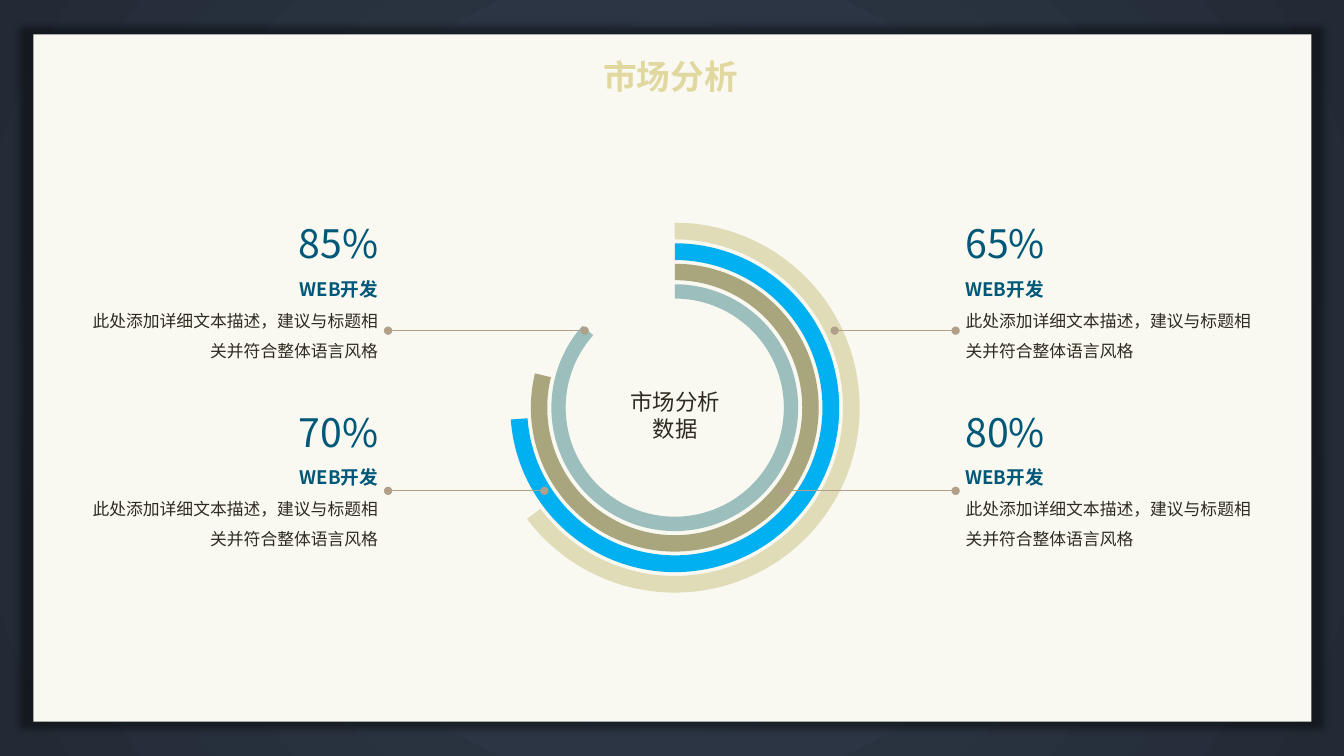
from dataclasses import dataclass
from typing import Any

from lxml.etree import SubElement
from pptx import Presentation
from pptx.dml.color import RGBColor
from pptx.enum.shapes import MSO_CONNECTOR, MSO_SHAPE
from pptx.enum.text import MSO_ANCHOR, MSO_AUTO_SIZE, PP_ALIGN
from pptx.oxml.ns import qn
from pptx.util import Pt


@dataclass(frozen=True)
class Theme:
    font: str = "Noto Sans CJK SC"
    night: str = "222A35"
    dusk: str = "333F50"
    paper: str = "F9F8F1"
    bronze: str = "84703F"
    gold: str = "E1D8A0"
    navy: str = "005878"
    ink: str = "2F2B20"
    rule: str = "B1A089"
    title: float = 24
    core: float = 16
    share: float = 28
    head: float = 13.3
    body: float = 12


@dataclass(frozen=True)
class Ring:
    color: str
    end: float  # degrees, clockwise from three o'clock
    band: float  # thickness as a share of the diameter


@dataclass(frozen=True)
class Note:
    share: str
    left: float
    top: float
    align: PP_ALIGN


@dataclass(frozen=True)
class Lead:
    start: float
    stop: float
    y: float


@dataclass(frozen=True)
class Line:
    text: str
    size: float
    color: str
    bold: bool = False
    space: dict[str, Any] | None = None


T = Theme()
MID_X, MID_Y = 482, 291.2
OUTER, STEP = 264.2, 29.3
LEFT, RIGHT = 51.1, 682.6
WIDE, HIGH = 226.1, 108.7
ROWS = (153.4, 288)
EDGE = LEFT + WIDE
UPPER, LOWER = 236.2, 350.6

RINGS = [
    Ring("DFDCB7", 143, 0.045),
    Ring("00B0F0", 175.88, 0.051),
    Ring("A9A57C", 193.8, 0.057),
    Ring("9CBEBD", 221.59, 0.058),
]
LEADS = [
    Lead(EDGE, 417.6, UPPER),
    Lead(EDGE, 388.8, LOWER),
    Lead(596.2, RIGHT, UPPER),
    Lead(559.4, RIGHT, LOWER),
]
NOTES = [
    Note("65%", RIGHT, ROWS[0], PP_ALIGN.LEFT),
    Note("80%", RIGHT, ROWS[1], PP_ALIGN.LEFT),
    Note("85%", LEFT, ROWS[0], PP_ALIGN.RIGHT),
    Note("70%", LEFT, ROWS[1], PP_ALIGN.RIGHT),
]


def put(thing: Any, vals: dict[str, Any]) -> None:
    for key, val in vals.items():
        setattr(thing, key, val)


def add(root: Any, tag: str, **vals: Any) -> Any:
    return SubElement(root, qn(tag), {key: str(val) for key, val in vals.items()})


def blend(root: Any, stops: list[tuple[int, str]]) -> Any:
    """Fill the gradient found under root with new stops."""
    grad = root.find(".//" + qn("a:gradFill"))
    grad.clear()
    chain = add(grad, "a:gsLst")
    for pos, color in stops:
        add(add(chain, "a:gs", pos=pos * 1000), "a:srgbClr", val=color)
    return grad


def write(frame: Any, lines: list[Line], align: PP_ALIGN, anchor: MSO_ANCHOR) -> None:
    put(frame, {"word_wrap": True, "vertical_anchor": anchor,
                "auto_size": MSO_AUTO_SIZE.SHAPE_TO_FIT_TEXT})
    for num, line in enumerate(lines):
        para = frame.add_paragraph() if num else frame.paragraphs[0]
        put(para, {"alignment": align, **(line.space or {})})
        run = para.add_run()
        run.text = line.text
        put(run.font, {"name": T.font, "size": Pt(line.size), "bold": line.bold})
        run.font.fill.solid()
        run.font.color.rgb = RGBColor.from_string(line.color)
        add(run._r.get_or_add_rPr(), "a:ea", typeface=T.font)


def block(slide: Any, kind: MSO_SHAPE, box: tuple[float, ...], color: str) -> Any:
    shape = slide.shapes.add_shape(kind, *map(Pt, box))
    shape.shadow.inherit = False
    shape.fill.solid()
    shape.fill.fore_color.rgb = RGBColor.from_string(color)
    shape.line.fill.background()
    return shape


def label(slide: Any, box: tuple[float, ...], lines: list[Line],
          align: PP_ALIGN, anchor: MSO_ANCHOR) -> None:
    write(slide.shapes.add_textbox(*map(Pt, box)).text_frame, lines, align, anchor)


def draw_ring(slide: Any, ring: Ring, num: int) -> None:
    size = OUTER - num * STEP
    box = (MID_X - size / 2, MID_Y - size / 2, size, size)
    arc = block(slide, MSO_SHAPE.BLOCK_ARC, box, ring.color)
    for spot, val in enumerate((270 * 0.6, ring.end * 0.6, ring.band)):
        arc.adjustments[spot] = val


def draw_lead(slide: Any, lead: Lead) -> None:
    ends = map(Pt, (lead.start, lead.y, lead.stop, lead.y))
    wire = slide.shapes.add_connector(MSO_CONNECTOR.STRAIGHT, *ends)
    wire.line.width = Pt(0.5)
    wire.line.color.rgb = RGBColor.from_string(T.rule)
    props = wire.element.spPr
    for tag in ("a:headEnd", "a:tailEnd"):
        add(props.find(qn("a:ln")), tag, type="oval")
    add(props, "a:effectLst")


def draw_note(slide: Any, note: Note) -> None:
    lines = [
        Line(note.share, T.share, T.navy),
        Line("WEB开发", T.head, T.navy, True, {"line_spacing": 1.5}),
        Line("此处添加详细文本描述，建议与标题相关并符合整体语言风格", T.body, T.ink,
             space={"line_spacing": 1.5, "space_after": Pt(16)}),
    ]
    label(slide, (note.left, note.top, WIDE, HIGH), lines, note.align, MSO_ANCHOR.TOP)


def main() -> None:
    deck = Presentation()
    put(deck, {"slide_width": Pt(960), "slide_height": Pt(540)})
    slide = deck.slides.add_slide(deck.slide_layouts[5])

    # Backdrop
    slide.background.fill.gradient()
    grad = blend(slide.element, [(0, T.dusk), (100, T.night)])
    glow = add(grad, "a:path", path="circle")
    add(glow, "a:fillToRect", l=50000, t=50000, r=50000, b=50000)

    # Title
    title = slide.shapes.title
    put(title, {"left": Pt(40), "top": Pt(36), "width": Pt(878), "height": Pt(36)})
    write(title.text_frame, [Line("市场分析", T.title, T.gold, True)],
          PP_ALIGN.CENTER, MSO_ANCHOR.MIDDLE)
    title.text_frame.paragraphs[0].runs[0].font.fill.gradient()
    grad = blend(title.element, [(0, T.bronze), (60, T.gold), (100, T.bronze)])
    add(grad, "a:lin", ang=60 * 60000, scaled=0)

    # Paper panel with its shadow, behind the title
    panel = block(slide, MSO_SHAPE.RECTANGLE, (23.8, 24.5, 913, 491), T.paper)
    title.element.addprevious(panel.element)
    shade = add(panel.element.spPr.find(qn("a:effectLst")), "a:outerShdw",
                blurRad=Pt(5), sx=102000, sy=102000, algn="ctr", rotWithShape=0)
    add(add(shade, "a:srgbClr", val="000000"), "a:alpha", val=40000)

    # Rings, leader lines and notes
    for num, ring in enumerate(RINGS):
        draw_ring(slide, ring, num)
    for lead in LEADS:
        draw_lead(slide, lead)
    core = [Line(text, T.core, T.ink) for text in ("市场分析", "数据")]
    label(slide, (424, 273.6, 116.6, 46), core, PP_ALIGN.CENTER, MSO_ANCHOR.MIDDLE)
    for note in NOTES:
        draw_note(slide, note)

    deck.save("out.pptx")


if __name__ == "__main__":
    main()
